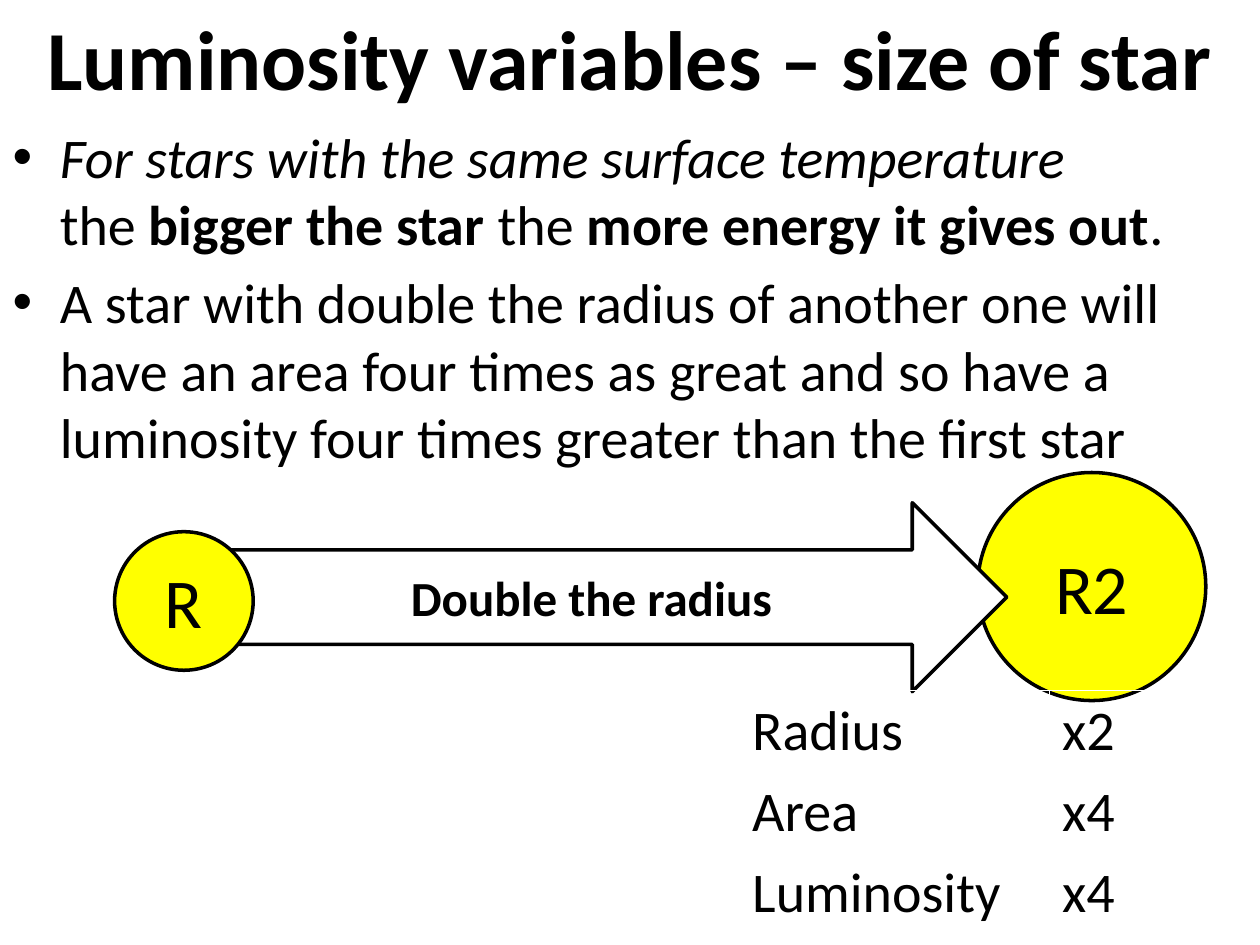
from typing import NamedTuple

from pptx import Presentation
from pptx.dml.color import RGBColor
from pptx.enum.shapes import MSO_SHAPE
from pptx.enum.text import MSO_ANCHOR, MSO_AUTO_SIZE, PP_ALIGN
from pptx.util import Inches, Pt

FONT = "Calibri"
BLACK, WHITE, YELLOW = "000000", "FFFFFF", "FFFF00"


class Figure(NamedTuple):
    kind: MSO_SHAPE
    left: float
    top: float
    width: float
    height: float
    fill: str
    label: str
    size: int
    bold: bool = False


ARROW_AND_BIG_STAR = [
    Figure(MSO_SHAPE.OVAL, 7.76, 3.75, 1.81, 1.81, YELLOW, "R2", 40),
    Figure(MSO_SHAPE.RIGHT_ARROW, 1.77, 3.99, 6.22, 1.5, WHITE,
           "Double the radius", 28, True),
]
SMALL_STAR = Figure(MSO_SHAPE.OVAL, 0.91, 4.22, 1.1, 1.1, YELLOW, "R", 40)

# Each bullet is a list of (text, bold, italic) runs.
BULLETS = [
    [("For stars with the same surface temperature", False, True),
     ("\v", False, False),
     ("the ", False, False),
     ("bigger the star ", True, False),
     ("the ", False, False),
     ("more energy it gives out", True, False),
     (".", False, False)],
    [("A star with double the radius of another one will have an area four "
      "times as great and so have a luminosity four times greater than the "
      "first star", False, False)],
]
FACTORS = [("Radius", "x2"), ("Area", "x4"), ("Luminosity", "x4")]
COLUMN_WIDTHS = [2.46, 1.68]
ROW_HEIGHT = 0.64


def rgb(color: str) -> RGBColor:
    return RGBColor.from_string(color)


def add_text(p, text: str, *, size: int = 32, bold: bool = False,
             italic: bool = False, color: str = BLACK, align=None) -> None:
    """Append a formatted run to a paragraph; a vertical tab breaks the line."""
    if align is not None:
        p.alignment = align
    if text == "\v":
        p.add_line_break()
        return
    r = p.add_run()
    r.text = text
    r.font.name = FONT
    r.font.size = Pt(size)
    r.font.bold = bold
    r.font.italic = italic
    r.font.color.rgb = rgb(color)


def place(sp, left: float, top: float, width: float, height: float):
    """Move a placeholder and return its top-anchored text frame."""
    sp.left, sp.top = Inches(left), Inches(top)
    sp.width, sp.height = Inches(width), Inches(height)
    tf = sp.text_frame
    tf.word_wrap = True
    tf.auto_size = MSO_AUTO_SIZE.NONE
    tf.vertical_anchor = MSO_ANCHOR.TOP
    return tf


def add_figure(s, fig: Figure) -> None:
    sp = s.shapes.add_shape(fig.kind, Inches(fig.left), Inches(fig.top),
                            Inches(fig.width), Inches(fig.height))
    sp.shadow.inherit = False
    sp.fill.solid()
    sp.fill.fore_color.rgb = rgb(fig.fill)
    sp.line.color.rgb = rgb(BLACK)
    sp.line.width = Pt(2)
    tf = sp.text_frame
    tf.vertical_anchor = MSO_ANCHOR.MIDDLE
    add_text(tf.paragraphs[0], fig.label, size=fig.size, bold=fig.bold,
             align=PP_ALIGN.CENTER)


def add_factor_table(s, left: float, top: float) -> None:
    table = s.shapes.add_table(
        len(FACTORS), len(COLUMN_WIDTHS), Inches(left), Inches(top),
        Inches(sum(COLUMN_WIDTHS)), Inches(ROW_HEIGHT * len(FACTORS))).table
    table.first_row = table.horz_banding = False
    for column, width in zip(table.columns, COLUMN_WIDTHS):
        column.width = Inches(width)
    for i, factor in enumerate(FACTORS):
        for j, text in enumerate(factor):
            cell = table.cell(i, j)
            cell.fill.background()
            add_text(cell.text_frame.paragraphs[0], text)


def main() -> None:
    prs = Presentation()
    prs.slide_width, prs.slide_height = Inches(10), Inches(7.5)
    s = prs.slides.add_slide(prs.slide_layouts.get_by_name("Title and Content"))

    for fig in ARROW_AND_BIG_STAR:
        add_figure(s, fig)

    tf = place(s.shapes.title, 0, 0, 10, 1.25)
    add_text(tf.paragraphs[0], "Luminosity variables – size of star", size=48,
             bold=True, align=PP_ALIGN.CENTER)

    tf = place(s.placeholders[1], 0, 0.92, 10, 3.39)
    for i, bullet in enumerate(BULLETS):
        p = tf.paragraphs[0] if i == 0 else tf.add_paragraph()
        for text, bold, italic in bullet:
            add_text(p, text, bold=bold, italic=italic)

    add_figure(s, SMALL_STAR)
    add_factor_table(s, 5.87, 5.48)
    prs.save("out.pptx")


if __name__ == "__main__":
    main()
